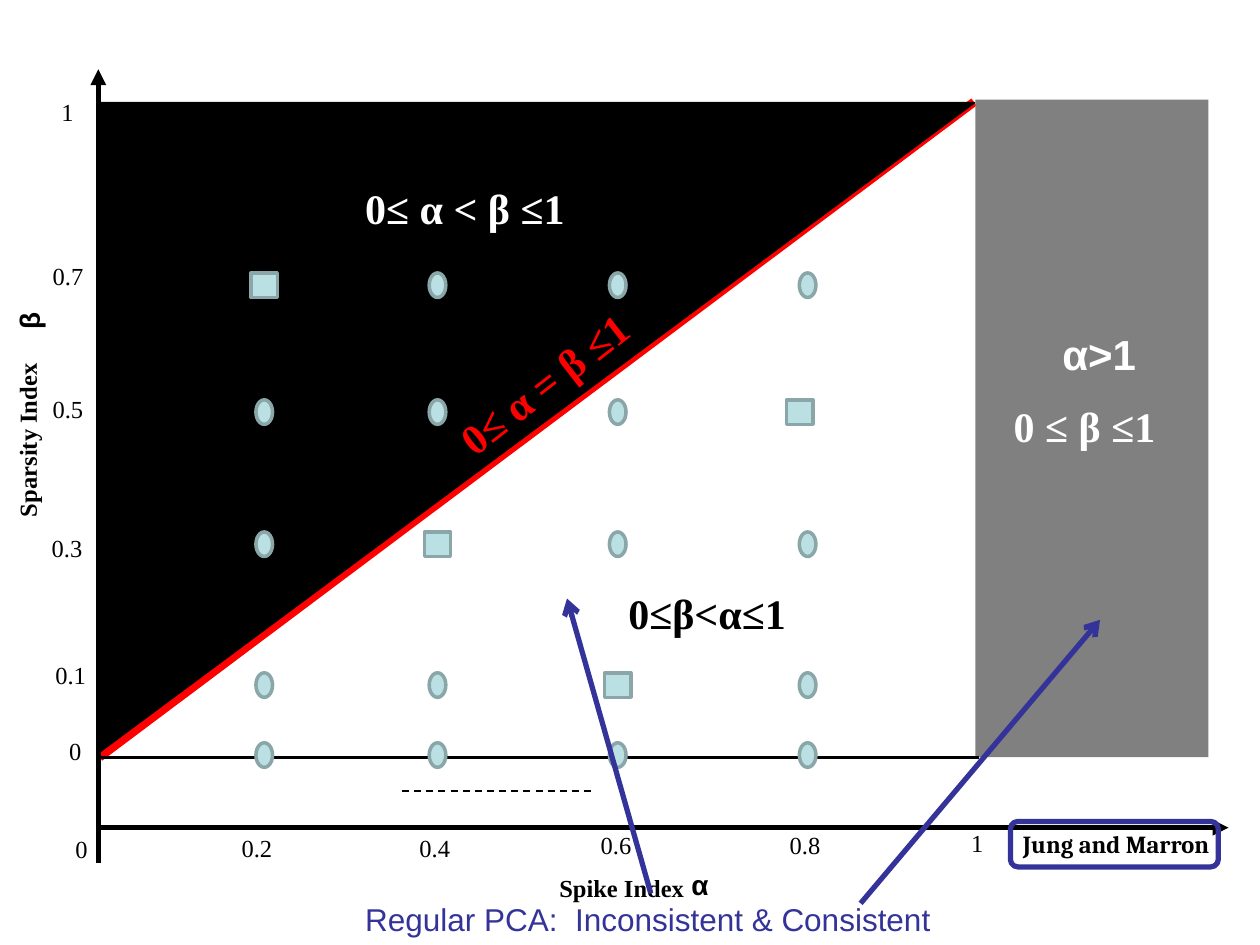
from dataclasses import dataclass
from typing import Optional

import lxml.etree
import pptx
import pptx.dml.color
import pptx.enum.dml
import pptx.enum.shapes
import pptx.enum.text
import pptx.oxml.ns
import pptx.util

Pt = pptx.util.Pt
Shapes = pptx.enum.shapes.MSO_SHAPE
Align = pptx.enum.text.PP_ALIGN


@dataclass(frozen=True)
class Theme:
    black: str = "000000"
    white: str = "FFFFFF"
    red: str = "FF0000"
    gray: str = "808080"
    navy: str = "333399"
    marker_fill: str = "BBE0E3"
    marker_line: str = "8AA6A8"
    serif: str = "Times New Roman"
    sans: str = "Arial"
    citation: str = "Cambria"
    tick: float = 14
    symbol: float = 16
    caption: float = 18
    region: float = 24


THEME = Theme()


@dataclass(frozen=True)
class Label:
    text: str
    left: float
    top: float
    width: float
    height: float = 32
    size: float = THEME.tick
    font: str = THEME.serif
    color: str = THEME.black
    bold: bool = True
    rotation: float = 0
    wrap: bool = True


@dataclass(frozen=True)
class Line:
    start: tuple[float, float]
    end: tuple[float, float]
    color: str
    width: float
    arrowhead: Optional[str] = None
    dashed: bool = False


COLUMNS = {0.2: 151, 0.4: 250, 0.6: 353, 0.8: 461.5}
ROWS = {0.7: 163, 0.5: 235.5, 0.3: 311, 0.1: 391.5, 0: 431.5}
# Highlighted (alpha, beta) pairs and their horizontal shift from the column.
SQUARES = {(0.2, 0.7): 0, (0.8, 0.5): -4.5, (0.4, 0.3): 0, (0.6, 0.1): 0}

BACK_LINES = [
    Line((229.7, 452.2), (337.7, 452.2), THEME.black, 1, dashed=True),
    Line((56.9, 432.7), (556.6, 58.3), THEME.red, 5),
]
AXES = [
    Line((56.2, 473), (702, 473), THEME.black, 3, "triangle"),
    Line((56.9, 432.7), (559.4, 432.7), THEME.black, 1.5),
    Line((56.2, 493.2), (56.2, 39.6), THEME.black, 3, "triangle"),
]

TICKS = [Label(text, left, top, width, bold=False) for text, left, top, width in [
    ("1", 28, 51.8, 60),
    ("0.7", 23, 145.4, 38),
    ("0.5", 23, 221.8, 55),
    ("0.3", 22.5, 301, 78),
    ("0.1", 24.5, 373.7, 38),
    ("0", 32.4, 416.9, 70),
    ("0", 36, 473, 70),
    ("0.2", 131, 472.3, 89),
    ("0.4", 232.6, 472.3, 78),
    ("0.6", 336.2, 470.9, 38),
    ("0.8", 444.2, 470.9, 52),
    ("1", 547.9, 469.4, 38),
]]
AXIS_TITLES = [
    Label("Spike Index", 312.5, 495.4, 234, 30),
    Label("α", 388, 492.5, 78.5, 30, THEME.symbol, THEME.sans),
    Label("Sparsity Index", -90, 185, 211, 24, rotation=270),
    Label("β", -5, 157.5, 46, 29.5, THEME.symbol, THEME.sans, rotation=270),
]
REGION_LABELS = [
    Label("0≤ α < β ≤1", 201.6, 100.8, 235.4, 80, THEME.region, color=THEME.white),
    Label("0≤β<α≤1", 352, 332, 188, 80, THEME.region),
    Label("0≤ α = β ≤1", 242, 165.6, 235.4, 58.3, THEME.region,
          color=THEME.red, rotation=322),
]
GRAY_LABEL = Label("α>1\n0 ≤ β ≤1", 553.7, 184.3, 149, 111.6, THEME.region,
                   color=THEME.white)
CITATION = Label("Jung and Marron", 577.4, 470.2, 135, 26.6, font=THEME.citation)
CAPTION = Label("Regular PCA:  Inconsistent & Consistent", 201.6, 510.5, 340.6, 28.8,
                THEME.caption, THEME.sans, THEME.navy, bold=False, wrap=False)


def rgb(color: str):
    return pptx.dml.color.RGBColor.from_string(color)


def add_label(page, label: Label):
    box = page.shapes.add_textbox(
        Pt(label.left), Pt(label.top), Pt(label.width), Pt(label.height))
    box.rotation = label.rotation
    box.text_frame.word_wrap = label.wrap
    box.text_frame.text = label.text
    for para in box.text_frame.paragraphs:
        for span in para.runs:
            span.font.name = label.font
            span.font.size = Pt(label.size)
            span.font.bold = label.bold
            span.font.color.rgb = rgb(label.color)
    return box


def add_gray_label(page) -> None:
    box = add_label(page, GRAY_LABEL)
    first, second = box.text_frame.paragraphs
    first.alignment = Align.CENTER
    first.runs[0].font.name = THEME.sans
    second.space_before = Pt(12)
    second._p.get_or_add_pPr().set("marL", str(Pt(18.5)))


def add_block(page, kind, left: float, top: float, width: float, height: float,
              fill: Optional[str] = None, line: Optional[str] = None,
              line_width: float = 1):
    block = page.shapes.add_shape(kind, Pt(left), Pt(top), Pt(width), Pt(height))
    block.shadow.inherit = False
    if fill:
        block.fill.solid()
        block.fill.fore_color.rgb = rgb(fill)
    else:
        block.fill.background()
    if line:
        block.line.color.rgb = rgb(line)
        block.line.width = Pt(line_width)
    else:
        block.line.fill.background()
    return block


def add_line(page, line: Line):
    connector = page.shapes.add_connector(
        pptx.enum.shapes.MSO_CONNECTOR.STRAIGHT,
        *(Pt(value) for value in line.start + line.end))
    connector.line.color.rgb = rgb(line.color)
    connector.line.width = Pt(line.width)
    if line.dashed:
        connector.line.dash_style = pptx.enum.dml.MSO_LINE.DASH
    qn = pptx.oxml.ns.qn
    if line.arrowhead:
        lxml.etree.SubElement(
            connector.line._get_or_add_ln(), qn("a:tailEnd"), type=line.arrowhead)
    lxml.etree.SubElement(connector._element.spPr, qn("a:effectLst"))
    return connector


def add_markers(page) -> None:
    for beta, y in ROWS.items():
        for alpha, x in COLUMNS.items():
            square = (alpha, beta) in SQUARES
            kind, width = (Shapes.RECTANGLE, 15) if square else (Shapes.OVAL, 9.5)
            center = x + SQUARES.get((alpha, beta), 0)
            add_block(page, kind, center - width / 2, y - 7, width, 14,
                      THEME.marker_fill, THEME.marker_line, 2)


def main() -> None:
    deck = pptx.Presentation()
    deck.slide_width, deck.slide_height = Pt(720), Pt(540)
    page = deck.slides.add_slide(deck.slide_layouts[6])

    for line in BACK_LINES:
        add_line(page, line)
    triangle = add_block(page, Shapes.RIGHT_TRIANGLE, 121, -5.8, 371.5, 500.4,
                         THEME.black, THEME.black, 0.75)
    triangle.rotation = 90
    add_block(page, Shapes.RECTANGLE, 557.3, 56.9, 133.2, 375.8, THEME.gray)
    for line in AXES:
        add_line(page, line)
    add_markers(page)
    for label in TICKS + AXIS_TITLES + REGION_LABELS + [CITATION]:
        add_label(page, label)
    add_gray_label(page)

    caption = add_label(page, CAPTION)
    pointer = add_line(page, Line((371.9, 510.5), (324, 342), THEME.navy, 3, "arrow"))
    pointer.begin_connect(caption, 0)
    add_line(page, Line((491.8, 516.2), (628.6, 354.2), THEME.navy, 3, "arrow"))
    add_block(page, Shapes.ROUNDED_RECTANGLE, 577.4, 469.4, 118.8, 26,
              line=THEME.navy, line_width=3)
    deck.save("out.pptx")


if __name__ == "__main__":
    main()
